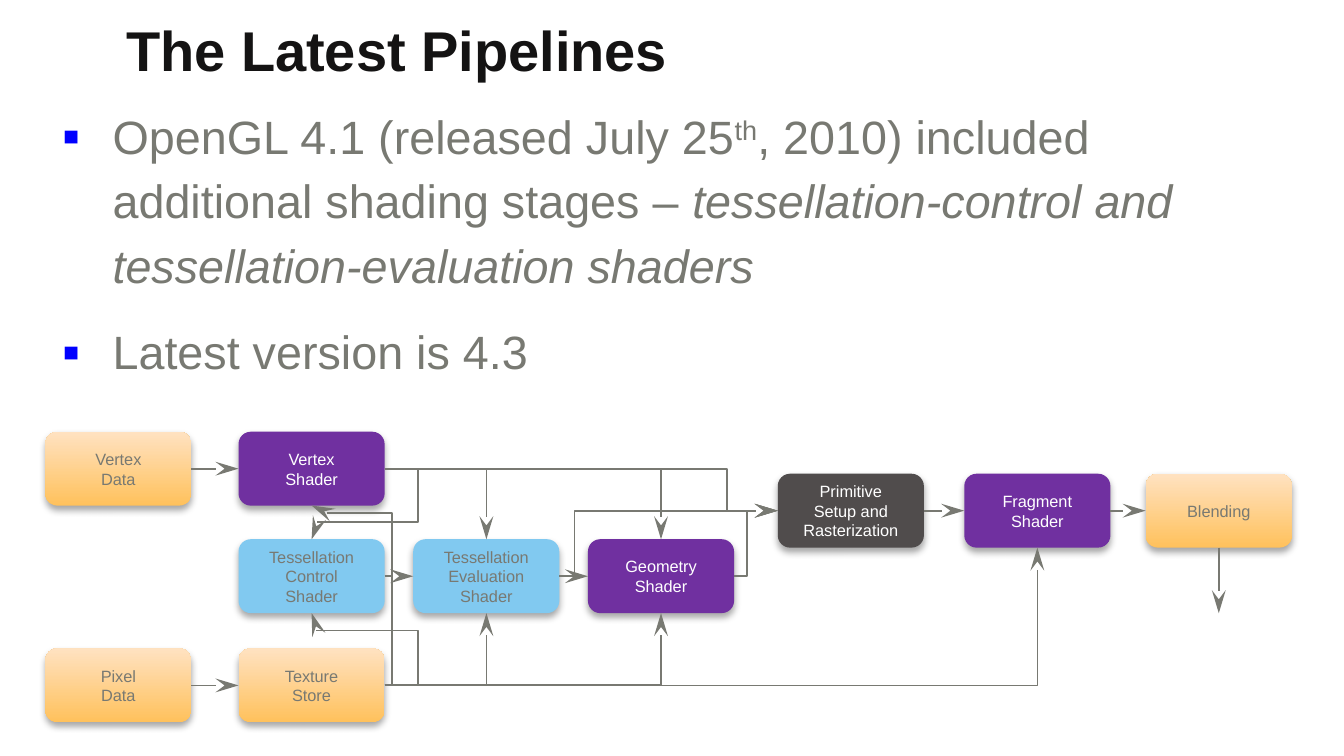
from lxml import etree
from pptx import Presentation
from pptx.dml.color import RGBColor
from pptx.enum.shapes import MSO_CONNECTOR, MSO_SHAPE
from pptx.enum.text import MSO_ANCHOR, MSO_AUTO_SIZE, PP_ALIGN
from pptx.oxml import parse_xml
from pptx.oxml.ns import nsdecls, qn
from pptx.util import Inches, Pt

ROUND = MSO_SHAPE.ROUNDED_RECTANGLE
LINE, BENT = MSO_CONNECTOR.STRAIGHT, MSO_CONNECTOR.ELBOW
TOP, LEFT, LOW, RIGHT = range(4)  # connection sites

HUES = {"ink": "141313", "gray": "787972", "bullet": "0000FF",
        "purple": "7030A0", "blue": "81C9F0", "dark": "504C4C",
        "amber": "FFC15C", "cream": "FFE2C1", "white": "FFFFFF"}
FONT = "Arial"

# Content
TITLE = "The Latest Pipelines"
POINTS = [
    [("OpenGL 4.1 (released July 25", ""), ("th", "super"),
     (", 2010) included additional shading stages – ", ""),
     ("tessellation-control and tessellation-evaluation shaders", "italic")],
    [("Latest version is 4.3", "")],
]

# Stage grid: name -> column, row, fill, label
COLS = [0.27, 1.42, 2.46, 3.5, 4.63, 5.74, 6.82]
ROWS = [2.57, 2.82, 3.21, 3.86]
WIDE, HIGH = 0.87, 0.44
STAGES = {
    "raster": (4, 1, "dark", "Primitive\nSetup and Rasterization"),
    "frag": (5, 1, "purple", "Fragment\vShader"),
    "blend": (6, 1, "amber", "Blending"),
    "data": (0, 0, "amber", "Vertex\vData"),
    "pixel": (0, 3, "amber", "Pixel\vData"),
    "vertex": (1, 0, "purple", "Vertex\vShader"),
    "store": (1, 3, "amber", "Texture\vStore"),
    "geom": (3, 2, "purple", "Geometry\vShader"),
    "ctrl": (1, 2, "blue", "Tessellation\vControl\vShader"),
    "eval": (2, 2, "blue", "Tessellation\vEvaluation\vShader"),
}

# Links: from, to, end site, number of segments, bend shares
LINKS = [
    ("data", "vertex", LEFT, 1, []),
    ("pixel", "store", LEFT, 1, []),
    ("raster", "frag", LEFT, 1, []),
    ("frag", "blend", LEFT, 1, []),
    ("ctrl", "eval", LEFT, 1, []),
    ("eval", "geom", LEFT, 1, []),
    ("vertex", "raster", LEFT, 3, [0.87]),
    ("geom", "raster", LEFT, 3, [0.29]),
    ("eval", "raster", LEFT, 3, [0.07]),
    ("vertex", "geom", TOP, 2, []),
    ("vertex", "eval", TOP, 2, []),
    ("vertex", "ctrl", TOP, 4, [-0.46, 0.76]),
    ("store", "frag", LOW, 2, []),
    ("store", "eval", LOW, 2, []),
    ("store", "geom", LOW, 2, []),
    ("store", "ctrl", LOW, 4, [-0.46, 0.76]),
    ("store", "vertex", LOW, 4, [-0.1, 0.96]),
]


def rgb(name):
    return RGBColor.from_string(HUES[name])


def style(para, size, hue):
    para.font.name, para.font.size = FONT, Pt(size)
    para.font.color.rgb = rgb(hue)


def place(shape, *box):
    shape.left, shape.top, shape.width, shape.height = map(Inches, box)


def add_bullet(para):
    props = para._p.get_or_add_pPr()
    props.set("marL", str(Inches(0.3)))
    props.set("indent", str(Inches(-0.3)))
    for xml in (f'<a:buClr {nsdecls("a")}><a:srgbClr val="{HUES["bullet"]}"/></a:buClr>',
                f'<a:buSzPct {nsdecls("a")} val="110000"/>',
                f'<a:buFont {nsdecls("a")} typeface="{FONT}"/>',
                f'<a:buChar {nsdecls("a")} char="▪"/>'):
        props.append(parse_xml(xml))


def add_stage(col, row, hue, label):
    box = shapes.add_shape(ROUND, *map(Inches, (COLS[col], ROWS[row], WIDE, HIGH)))
    if hue == "amber":
        box.fill.gradient()
        box.fill.gradient_angle = 90
        for stop, tint in zip(box.fill.gradient_stops, ("amber", "cream")):
            stop.color.rgb = rgb(tint)
    else:
        box.fill.solid()
        box.fill.fore_color.rgb = rgb(hue)
    box.line.fill.background()
    box.shadow.inherit = False
    box._element.spPr.find(qn("a:effectLst")).append(parse_xml(
        f'<a:outerShdw {nsdecls("a")} blurRad="{Pt(3.1)}" dist="{Pt(1.8)}" '
        'dir="5400000" rotWithShape="0"><a:srgbClr val="000000">'
        '<a:alpha val="35000"/></a:srgbClr></a:outerShdw>'))
    frame = box.text_frame
    frame.word_wrap, frame.vertical_anchor = True, MSO_ANCHOR.MIDDLE
    frame.text = label
    for para in frame.paragraphs:
        para.alignment = PP_ALIGN.CENTER
        style(para, 7, "white" if hue in ("purple", "dark") else "gray")
    return box


def add_link(start, site, parts=1, bends=()):
    link = shapes.add_connector(LINE if parts == 1 else BENT, 0, 0, 0, 0)
    link.begin_connect(start, site)
    link.line.color.rgb, link.line.width = rgb("gray"), Pt(0.75)
    props = link._element.spPr
    etree.SubElement(props.find(qn("a:ln")), qn("a:tailEnd"),
                     type="stealth", w="med", len="lg")
    etree.SubElement(props, qn("a:effectLst"))
    if parts > 1:
        geom = props.find(qn("a:prstGeom"))
        geom.set("prst", f"bentConnector{parts}")
        guides = geom.get_or_add_avLst()
        for num, share in enumerate(bends, 1):
            etree.SubElement(guides, qn("a:gd"), name=f"adj{num}",
                             fmla=f"val {round(share * 100000)}")
    return link


deck = Presentation()
deck.slide_width, deck.slide_height = Inches(8), Inches(4.5)
slide = deck.slides.add_slide(deck.slide_layouts[1])
shapes = slide.shapes

# Title
title = shapes.title
place(title, 0.65, 0, 7.35, 0.63)
frame = title.text_frame
frame.text = TITLE
frame.auto_size, frame.vertical_anchor = MSO_AUTO_SIZE.NONE, MSO_ANCHOR.TOP
frame.margin_top = Inches(0.09)
head = frame.paragraphs[0]
head.alignment = PP_ALIGN.LEFT
style(head, 24, "ink")
head.font.bold = True

# Bullet list
body = slide.placeholders[1]
place(body, 0.27, 0.54, 7.44, 3.42)
frame = body.text_frame
frame.auto_size = MSO_AUTO_SIZE.NONE
for num, point in enumerate(POINTS):
    para = frame.add_paragraph() if num else frame.paragraphs[0]
    add_bullet(para)
    para.line_spacing = 1.15
    para.space_before, para.space_after = Pt(4.8 if num else 0), Pt(4.8)
    style(para, 20, "gray")
    for text, look in point:
        run = para.add_run()
        run.text = text
        if look == "italic":
            run.font.italic = True
        elif look == "super":
            run.font._element.set("baseline", "30000")

# Pipeline stages and links
boxes = {name: add_stage(*spec) for name, spec in STAGES.items()}
for start, end, site, parts, bends in LINKS:
    add_link(boxes[start], RIGHT, parts, bends).end_connect(boxes[end], site)

# Output arrow below the last stage
blend = boxes["blend"]
out = add_link(blend, LOW)
out.end_x = blend.left + blend.width // 2
out.end_y = Inches(ROWS[2] + HIGH)

deck.save("out.pptx")
